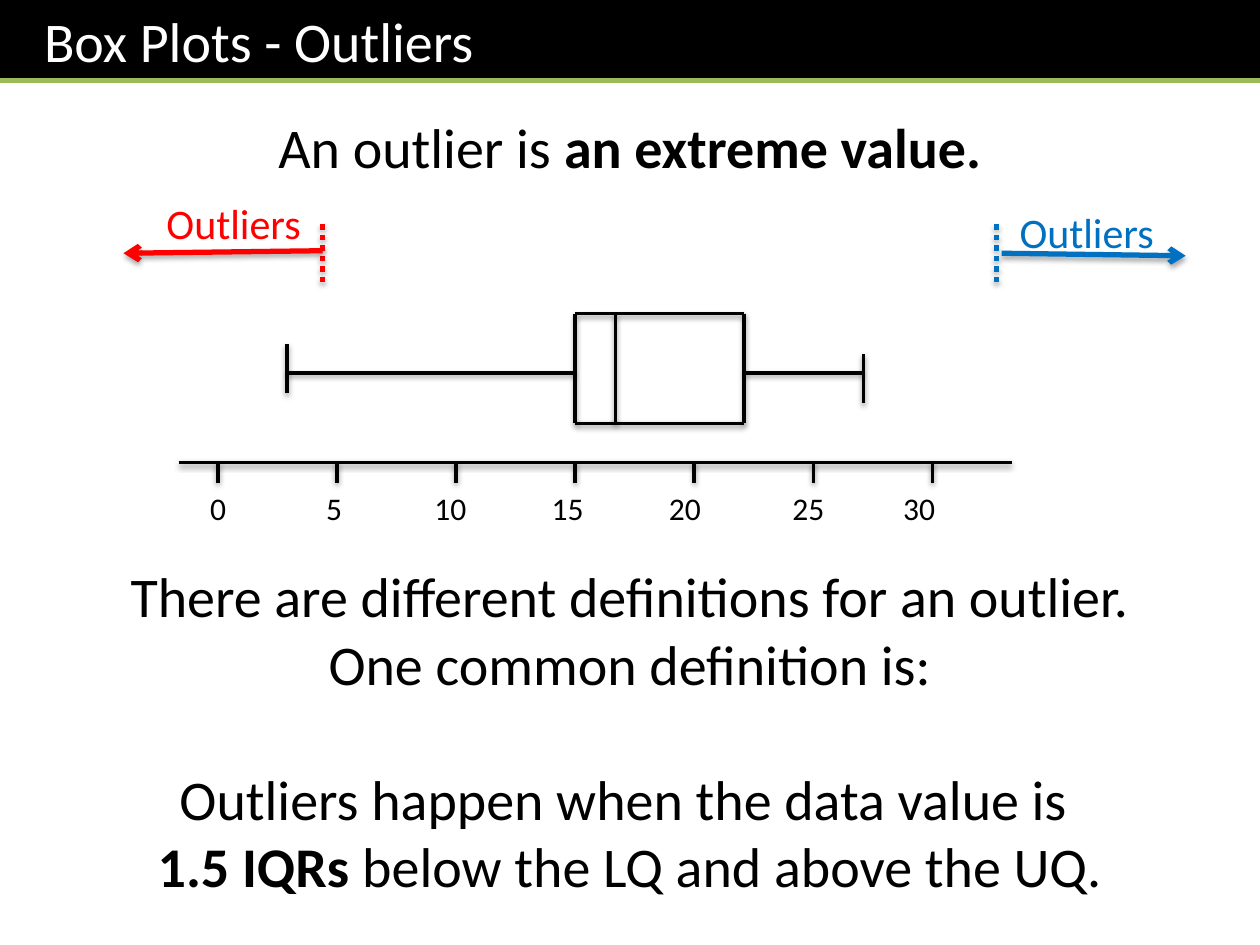
import pptx
import pptx.dml.color
import pptx.enum.dml
import pptx.enum.shapes
import pptx.enum.text
import pptx.oxml
import pptx.oxml.ns
import pptx.util

COLOURS = {"black": "000000", "white": "FFFFFF", "green": "9BBB59",
           "low": "FF0000", "high": "0070C0"}
FONT = "Calibri"
COLUMNS, ROWS = 100, 75
LEFT = pptx.enum.text.PP_ALIGN.LEFT
CENTRE = pptx.enum.text.PP_ALIGN.CENTER


def colour(name):
    return pptx.dml.color.RGBColor.from_string(COLOURS[name])


def effects(opacity=None, distance=1.6):
    """Effect list with a soft shadow below, or none without an opacity."""
    shadow = "" if opacity is None else (
        f'<a:outerShdw blurRad="{pptx.util.Pt(3.1)}" dist="{pptx.util.Pt(distance)}"'
        f' dir="5400000" rotWithShape="0"><a:srgbClr val="{COLOURS["black"]}">'
        f'<a:alpha val="{opacity * 1000}"/></a:srgbClr></a:outerShdw>')
    return pptx.oxml.parse_xml(
        f'<a:effectLst {pptx.oxml.ns.nsdecls("a")}>{shadow}</a:effectLst>')


class Slide:
    """Places elements on a grid of 100 columns and 75 rows."""

    def __init__(self, deck):
        self.page = deck.slides.add_slide(deck.slide_layouts[6])
        self.column = deck.slide_width / COLUMNS
        self.row = deck.slide_height / ROWS

    def place(self, x, y):
        return round(x * self.column), round(y * self.row)

    def bar(self, x, y, width, height, fill):
        box = self.page.shapes.add_shape(
            pptx.enum.shapes.MSO_SHAPE.RECTANGLE,
            *self.place(x, y), *self.place(width, height))
        box.shadow.inherit = False
        box.fill.solid()
        box.fill.fore_color.rgb = colour(fill)
        box.line.fill.background()
        return box

    def text(self, x, y, width, height, paragraphs, size, ink="black", align=CENTRE):
        box = self.page.shapes.add_textbox(
            *self.place(x, y), *self.place(width, height))
        self.fill_text(box, paragraphs, size, ink, align)
        return box

    def fill_text(self, box, paragraphs, size, ink, align):
        """Fill a box; each paragraph is a list of (wording, bold) spans."""
        frame = box.text_frame
        frame.word_wrap = True
        frame.vertical_anchor = pptx.enum.text.MSO_ANCHOR.TOP
        for index, spans in enumerate(paragraphs):
            para = frame.paragraphs[0] if index == 0 else frame.add_paragraph()
            para.alignment = align
            for wording, bold in spans:
                span = para.add_run()
                span.text = wording
                span.font.name = FONT
                span.font.size = pptx.util.Pt(size)
                span.font.bold = bold
                span.font.color.rgb = colour(ink)

    def line(self, start, end, ink="black", width=2, shadow=(38, 1.6),
             dotted=False, arrow=False):
        """Draw a straight line; an arrow points at its start."""
        link = self.page.shapes.add_connector(
            pptx.enum.shapes.MSO_CONNECTOR.STRAIGHT,
            *self.place(*start), *self.place(*end))
        link.line.color.rgb = colour(ink)
        link.line.width = pptx.util.Pt(width)
        if dotted:
            link.line.dash_style = pptx.enum.dml.MSO_LINE.ROUND_DOT
        if arrow:
            link.line._get_or_add_ln().append(pptx.oxml.parse_xml(
                f'<a:headEnd {pptx.oxml.ns.nsdecls("a")} type="arrow"/>'))
        link._element.spPr.append(effects(*shadow))


def heading(slide):
    title = slide.bar(0, 0, 100, 6.4, "black")
    title.text_frame.margin_left = pptx.util.Inches(0.35)
    slide.fill_text(title, [[("Box Plots - Outliers", False)]], 32, "white", LEFT)
    slide.line((0, 6.4), (100, 6.4), "green", 3, shadow=())
    slide.text(0, 8.4, 100, 6.4,
               [[("An outlier is ", False), ("an extreme value.", True)]], 32)


def axis_column(value):
    return 17.3 + 1.89 * value


def axis(slide):
    top, bottom = 36.7, 38.3
    ticks = range(0, 31, 5)
    slide.line((14.2, top), (80.3, top))
    for value in ticks:
        slide.line((axis_column(value), bottom), (axis_column(value), top))
    labels = slide.text(15.7, bottom, 63, 4,
                        [[("\t".join(str(value) for value in ticks), False)]],
                        18, align=LEFT)
    stops = "".join(f'<a:tab pos="{pptx.util.Inches(inches)}" algn="l"/>'
                    for inches in (0.92, 1.78, 2.71, 3.64, 4.62, 5.5))
    labels.text_frame.paragraphs[0]._p.get_or_add_pPr().append(
        pptx.oxml.parse_xml(
            f'<a:tabLst {pptx.oxml.ns.nsdecls("a")}>{stops}</a:tabLst>'))


def box_plot(slide):
    low, lower, median, upper, high = (
        axis_column(value) for value in (2.9, 15, 16.7, 22.1, 27.1))
    top, middle, bottom = 24.9, 29.6, 33.6
    slide.line((low, 27.3), (low, 31.2))
    slide.line((high, 28.1), (high, 32))
    for quartile in (lower, median, upper):
        slide.line((quartile, top), (quartile, bottom))
    for edge in (top, bottom):
        slide.line((lower, edge), (upper, edge))
    for start, end in ((low, lower), (upper, high)):
        slide.line((start, middle), (end, middle))


def outlier_zone(slide, ink, limit, tip, tail, label):
    style = {"ink": ink, "width": 3, "shadow": (35, 1.8)}
    slide.line((limit, 17.8), (limit, 22.5), dotted=True, **style)
    slide.line(tip, tail, arrow=True, **style)
    slide.text(*label, 18.9, 5, [[("Outliers", False)]], 24, ink)


def definition(slide):
    box = slide.text(0, 44.1, 100, 27.9, [
        [("There are different definitions for an outlier.", False)],
        [(" One common definition is: ", False)],
        [("Outliers happen when the data value is ", False)],
        [("1.5 IQRs ", True), ("below the LQ and above the UQ.", False)],
    ], 32)
    box.text_frame.paragraphs[2].space_before = pptx.util.Pt(39)


def main():
    deck = pptx.Presentation()
    deck.slide_width = pptx.util.Inches(10)
    deck.slide_height = pptx.util.Inches(7.5)
    slide = Slide(deck)
    heading(slide)
    axis(slide)
    box_plot(slide)
    definition(slide)
    outlier_zone(slide, "high", 79.1, (94.1, 20.3), (79.5, 20.1), (76.8, 15.9))
    outlier_zone(slide, "low", 25.6, (9.8, 20.1), (25.6, 19.9), (9.1, 15.2))
    deck.save("out.pptx")


if __name__ == "__main__":
    main()
